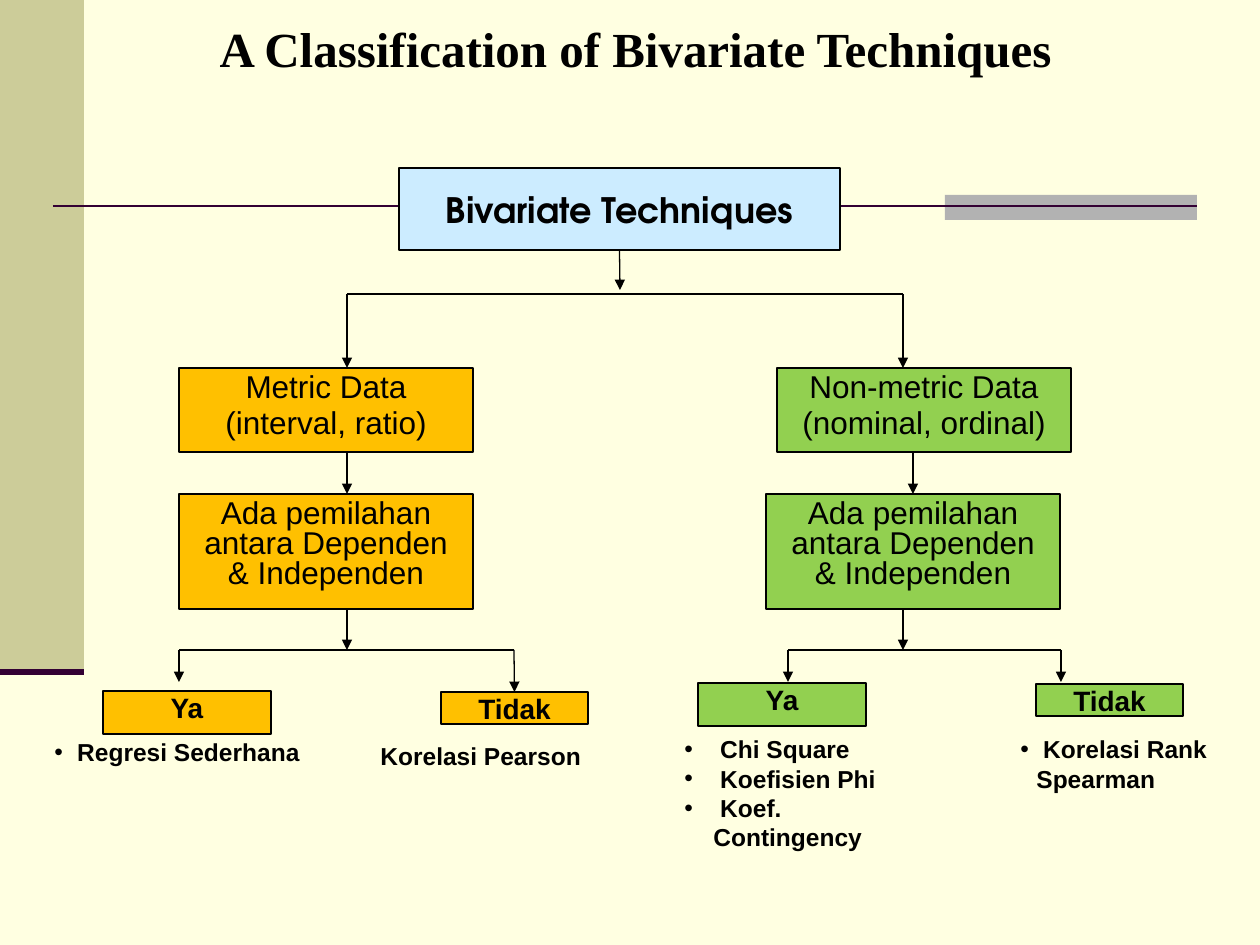
from dataclasses import dataclass

from lxml import etree
from pptx import Presentation
from pptx.dml.color import RGBColor
from pptx.enum.shapes import MSO_CONNECTOR, MSO_SHAPE
from pptx.enum.text import MSO_ANCHOR, PP_ALIGN
from pptx.oxml.ns import qn
from pptx.util import Emu, Pt

RECT = MSO_SHAPE.RECTANGLE
STRAIGHT = MSO_CONNECTOR.STRAIGHT
CENTER, LEFT = PP_ALIGN.CENTER, PP_ALIGN.LEFT
TOP, MIDDLE = MSO_ANCHOR.TOP, MSO_ANCHOR.MIDDLE
TOP_SITE, BOTTOM_SITE = 0, 2
PX_PER_INCH = 126


@dataclass(frozen=True)
class Theme:
    paper: str = "FFFFE1"
    band: str = "CCCC99"
    accent: str = "B2B2B2"
    rule: str = "330033"
    ink: str = "000000"
    root: str = "CCECFF"
    metric: str = "FFC000"
    nonmetric: str = "92D050"
    title_font: str = "Times New Roman"
    root_font: str = "TeX Gyre Adventor"
    body_font: str = "Arial"
    title_size: int = 28
    root_size: int = 20
    data_size: int = 18
    answer_size: int = 16
    method_size: int = 14


THEME = Theme()


@dataclass(frozen=True)
class TextStyle:
    size: int
    bold: bool = True
    font: str = THEME.body_font
    align: PP_ALIGN = CENTER
    anchor: MSO_ANCHOR = TOP
    tight: bool = False


TITLE = TextStyle(THEME.title_size, font=THEME.title_font, anchor=MIDDLE)
ROOT = TextStyle(THEME.root_size, font=THEME.root_font, anchor=MIDDLE)
DATA = TextStyle(THEME.data_size, bold=False, tight=True)
ANSWER = TextStyle(THEME.answer_size, tight=True)
METHOD = TextStyle(THEME.method_size, align=LEFT)


@dataclass(frozen=True)
class Area:
    left: int
    top: int
    width: int
    height: int


@dataclass(frozen=True)
class Methods:
    area: Area
    lines: tuple[str, ...]
    indent: int = 16
    bulleted: bool = True


@dataclass(frozen=True)
class Branch:
    fill: str
    data: str
    data_area: Area
    split_area: Area
    yes_area: Area
    no_area: Area
    stem_x: int        # arrows from the root and out of the split box
    split_x: int       # arrow between the two boxes
    split_joined: bool
    yes_x: int
    no_x: int
    no_joined: bool
    methods: tuple[Methods, ...]


BRANCHES = (
    Branch(THEME.metric, "Metric Data\n(interval, ratio)",
           Area(179, 368, 294, 84), Area(179, 494, 294, 115),
           Area(103, 691, 168, 43), Area(441, 692, 147, 32),
           347, 347, False, 179, 514, True,
           (Methods(Area(42, 731, 315, 43), (" Regresi Sederhana",)),
            Methods(Area(368, 735, 294, 43), ("Korelasi Pearson",), bulleted=False))),
    Branch(THEME.nonmetric, "Non-metric Data\n(nominal, ordinal)",
           Area(777, 368, 294, 84), Area(766, 494, 294, 115),
           Area(698, 683, 168, 43), Area(1036, 684, 147, 32),
           903, 913, True, 788, 1061, False,
           (Methods(Area(672, 728, 262, 102),
                    (" Chi Square", " Koefisien Phi", " Koef. Contingency"), indent=29),
            Methods(Area(1008, 728, 284, 72), (" Korelasi Rank Spearman",)))),
)
SPLIT_TEXT = "Ada pemilahan antara Dependen & Independen"
ROOT_BAR_Y = 294
ANSWER_BAR_Y = 650
YES_ARROW_Y = 682


def px(value: int) -> Emu:
    return Emu(round(value * 914400 / PX_PER_INCH))


def place(area: Area) -> tuple[Emu, ...]:
    return px(area.left), px(area.top), px(area.width), px(area.height)


def write(shape, text: str, style: TextStyle, wrap: bool = True) -> None:
    frame = shape.text_frame
    frame.text = text
    frame.word_wrap = wrap
    frame.vertical_anchor = style.anchor
    for paragraph in frame.paragraphs:
        paragraph.alignment = style.align
        if style.tight:
            paragraph.line_spacing = 0.8
            paragraph.space_before = Pt(style.size * 0.2)
        for run in paragraph.runs:
            run.font.name = style.font
            run.font.size = Pt(style.size)
            run.font.bold = style.bold
            run.font.color.rgb = RGBColor.from_string(THEME.ink)


def add_box(slide, area: Area, fill: str, outline: float = 0):
    box = slide.shapes.add_shape(RECT, *place(area))
    box.shadow.inherit = False
    box.fill.solid()
    box.fill.fore_color.rgb = RGBColor.from_string(fill)
    if outline:
        box.line.color.rgb = RGBColor.from_string(THEME.ink)
        box.line.width = Pt(outline)
    else:
        box.line.fill.background()
    return box


def add_label(slide, area: Area, fill: str, text: str, style: TextStyle):
    box = add_box(slide, area, fill, 0.75)
    write(box, text, style)
    return box


def add_line(slide, start: tuple[int, int], end: tuple[int, int], arrow: bool = False,
             color: str = THEME.ink, width: float = 0.75):
    line = slide.shapes.add_connector(STRAIGHT, *map(px, start + end))
    line.line.color.rgb = RGBColor.from_string(color)
    line.line.width = Pt(width)
    if arrow:
        etree.SubElement(line.line._get_or_add_ln(), qn("a:tailEnd"), type="triangle")
    etree.SubElement(line._element.spPr, qn("a:effectLst"))
    return line


def add_methods(slide, methods: Methods) -> None:
    box = slide.shapes.add_textbox(*place(methods.area))
    write(box, "\n".join(methods.lines), METHOD)
    for paragraph in box.text_frame.paragraphs:
        props = paragraph._p.get_or_add_pPr()
        props.set("marL", str(px(methods.indent)))
        props.set("indent", str(-px(methods.indent)))
        if methods.bulleted:
            etree.SubElement(props, qn("a:buFont"), typeface=THEME.body_font)
            etree.SubElement(props, qn("a:buChar"), char="•")


def add_branch(slide, branch: Branch) -> None:
    add_label(slide, branch.data_area, branch.fill, branch.data, DATA)
    split = add_label(slide, branch.split_area, branch.fill, SPLIT_TEXT, DATA)
    add_label(slide, branch.yes_area, branch.fill, "Ya", ANSWER)
    no = add_label(slide, branch.no_area, branch.fill, "Tidak", ANSWER)

    # Arrows down to the data type and the split question
    data_bottom = branch.data_area.top + branch.data_area.height
    split_bottom = branch.split_area.top + branch.split_area.height
    stem, split_x = branch.stem_x, branch.split_x
    add_line(slide, (stem, ROOT_BAR_Y), (stem, branch.data_area.top), True)
    to_split = add_line(slide, (split_x, data_bottom), (split_x, branch.split_area.top), True)
    if branch.split_joined:
        to_split.end_connect(split, TOP_SITE)

    # Fork to the two answers
    yes_x, no_x = branch.yes_x, branch.no_x
    no_y = branch.no_area.top if branch.no_joined else YES_ARROW_Y
    add_line(slide, (stem, split_bottom), (stem, ANSWER_BAR_Y), True)
    add_line(slide, (yes_x, ANSWER_BAR_Y), (no_x, ANSWER_BAR_Y))
    add_line(slide, (yes_x, ANSWER_BAR_Y), (yes_x, YES_ARROW_Y), True)
    to_no = add_line(slide, (no_x, ANSWER_BAR_Y), (no_x, no_y), True)
    if branch.no_joined:
        to_no.end_connect(no, TOP_SITE)

    for methods in branch.methods:
        add_methods(slide, methods)


def main() -> None:
    deck = Presentation()
    deck.slide_width, deck.slide_height = px(1260), px(945)
    slide = deck.slides.add_slide(deck.slide_layouts[6])
    slide.background.fill.solid()
    slide.background.fill.fore_color.rgb = RGBColor.from_string(THEME.paper)

    # Backdrop
    add_box(slide, Area(0, 0, 84, 672), THEME.band)
    add_box(slide, Area(945, 195, 252, 25), THEME.accent)
    add_line(slide, (53, 206), (1197, 206), color=THEME.rule, width=1.5)
    add_line(slide, (0, 672), (84, 672), color=THEME.rule, width=3.5)

    # Title
    title = slide.shapes.add_textbox(*place(Area(53, -31, 1165, 157)))
    write(title, "A Classification of Bivariate Techniques", TITLE)

    # Root of the tree
    root = add_box(slide, Area(399, 168, 441, 82), THEME.root, 1)
    write(root, "Bivariate Techniques", ROOT, wrap=False)
    trunk = add_line(slide, (620, 250), (620, 290), True)
    trunk.begin_connect(root, BOTTOM_SITE)
    add_line(slide, *((branch.stem_x, ROOT_BAR_Y) for branch in BRANCHES))

    for branch in BRANCHES:
        add_branch(slide, branch)
    deck.save("out.pptx")


if __name__ == "__main__":
    main()
